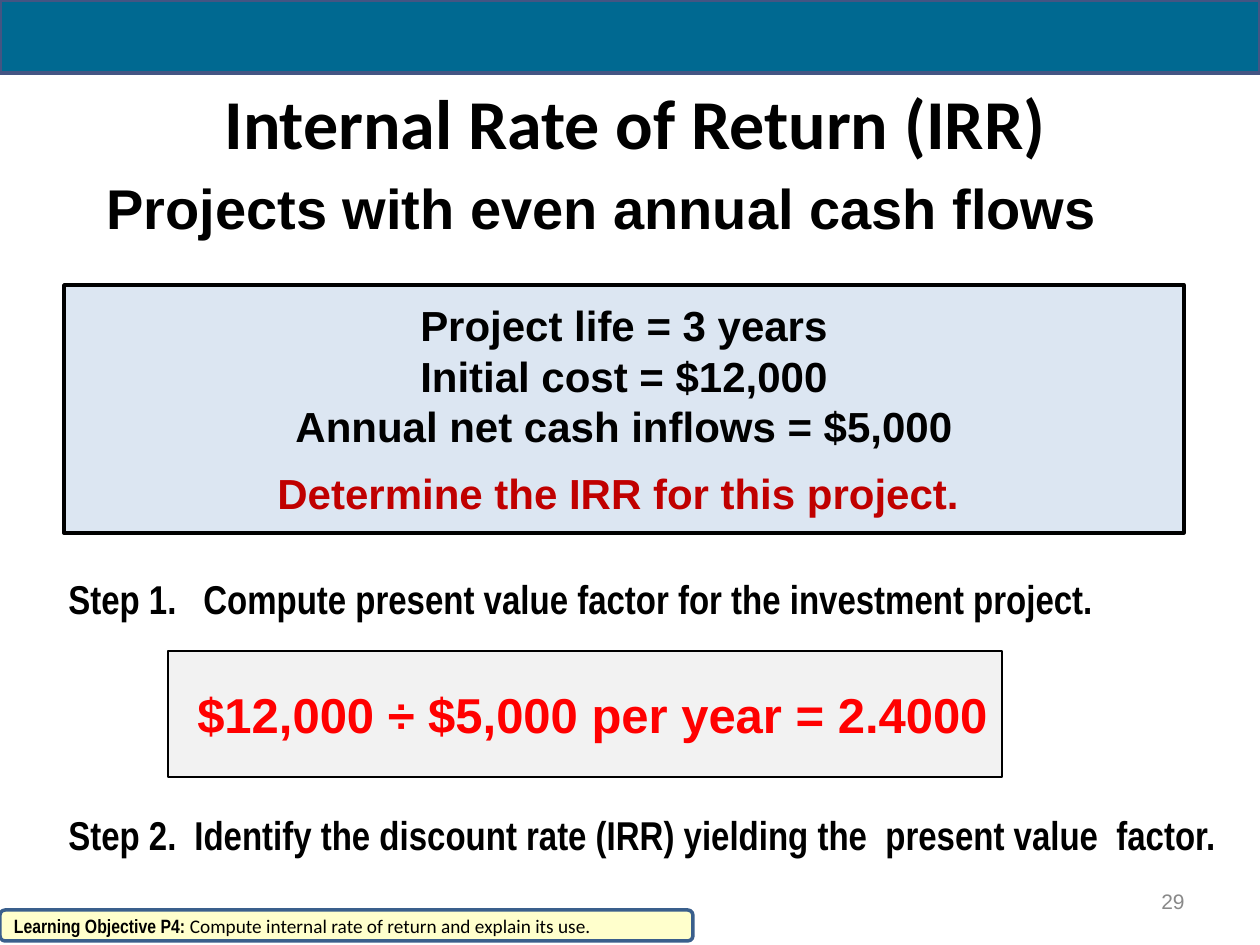
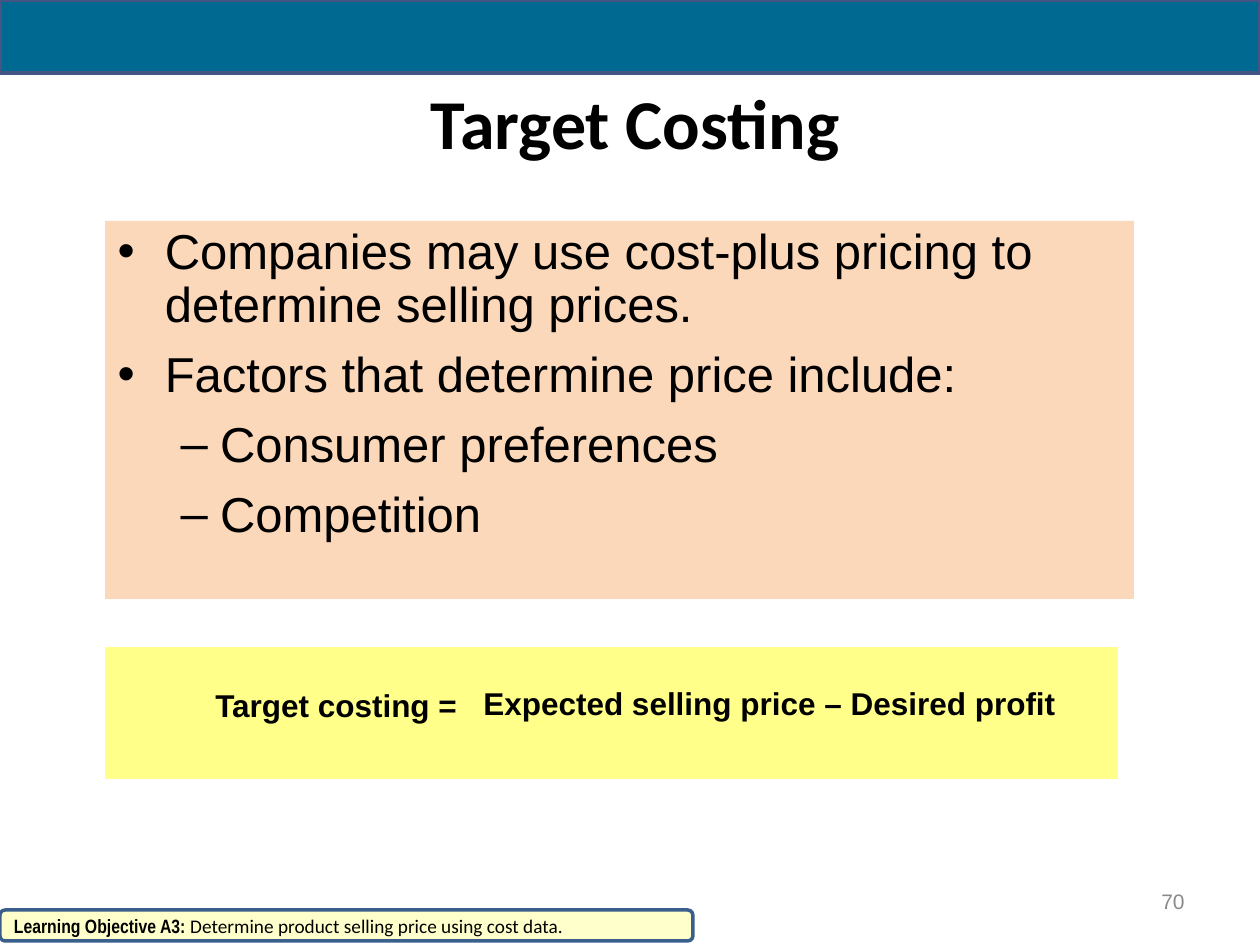
"""Build two accounting slides: internal rate of return and target costing."""
from lxml.etree import SubElement as Sub
from pptx import Presentation as Deck
from pptx.dml.color import RGBColor as RGB
from pptx.enum.shapes import MSO_SHAPE as Form
from pptx.enum.text import MSO_ANCHOR as Anchor, MSO_AUTO_SIZE as Fit, PP_ALIGN as Align
from pptx.oxml.ns import qn
from pptx.util import Pt

SCALE = 914400 / 126
BLACK = RGB(0x00, 0x00, 0x00)
TEAL = RGB(0x00, 0x69, 0x91)
PLUM = RGB(0x44, 0x55, 0x83)
ICE = RGB(0xDC, 0xE6, 0xF2)
MIST = RGB(0xF2, 0xF2, 0xF2)
CREAM = RGB(0xFF, 0xFF, 0xCC)
NAVY = RGB(0x3A, 0x5F, 0x8C)
PEACH = RGB(0xFC, 0xD5, 0xB5)
LEMON = RGB(0xFF, 0xFF, 0x89)
BRICK = RGB(0xC0, 0x00, 0x00)
RED = RGB(0xFF, 0x00, 0x00)
GREY = RGB(0x89, 0x89, 0x89)

MID = {"alignment": Align.CENTER}


def px(num):
    return round(num * SCALE)


def font(name, size, bold=True, ink=BLACK):
    return {"name": name, "size": Pt(size), "bold": bold, "ink": ink}


def style(item, vals):
    for key, val in vals.items():
        if key == "ink":
            item.color.rgb = val
        else:
            setattr(item, key, val)


class Maker:
    """Hold the shared style and the current slide."""

    head = font("Calibri", 40)
    lead = font("Arial", 32)
    step = font("Arial Narrow", 23)
    fact = font("Arial", 24)
    sum = font("Arial", 28, ink=RED)
    item = font("Arial", 28, bold=False)
    term = font("Arial", 18)
    goal = font("Arial Narrow", 11)
    note = font("Calibri", 11, bold=False)
    page = font("Arial", 12, bold=False, ink=GREY)

    def __init__(self):
        self.deck = Deck()
        self.deck.slide_width, self.deck.slide_height = px(1260), px(945)
        self.slide = None

    def start(self, title, num, code, aim):
        first = self.slide is None
        self.slide = self.deck.slides.add_slide(self.deck.slide_layouts[1])
        if first:
            band = self.rect((0, 0, 1260, 73), TEAL, PLUM, 2.25)
            self.deck.slide_master.shapes.element.insert(2, band.element)
        head = self.place(0, (68, 42, 1134, 158))
        self.line(head, [(title, self.head)], MID)
        self.text((903, 876, 294, 50), num, self.page, {"alignment": Align.RIGHT}, Anchor.MIDDLE)
        foot = self.rect((0, 910, 693, 31), CREAM, NAVY, 2, Form.ROUNDED_RECTANGLE)
        self.line(foot, [(f"Learning Objective {code}:", self.goal), (f" {aim}", self.note)],
                  {"alignment": Align.LEFT})

    def place(self, idx, box):
        hold = self.slide.placeholders[idx]
        style(hold, dict(zip(("left", "top", "width", "height"), map(px, box))))
        hold.text_frame.auto_size = Fit.NONE
        return hold

    def rect(self, box, fill, line=None, width=0, form=Form.RECTANGLE):
        shape = self.slide.shapes.add_shape(form, *map(px, box))
        shape.shadow.inherit = False
        shape.fill.solid()
        shape.fill.fore_color.rgb = fill
        if line is None:
            shape.line.fill.background()
        else:
            shape.line.color.rgb = line
            shape.line.width = Pt(width)
        shape.text_frame.vertical_anchor = Anchor.MIDDLE
        return shape

    def text(self, box, words, look, para=None, anchor=Anchor.TOP):
        area = self.slide.shapes.add_textbox(*map(px, box))
        style(area.text_frame, {"word_wrap": True, "vertical_anchor": anchor})
        return self.line(area, [(words, look)], para or {})

    def line(self, shape, runs, para, more=False):
        frame = shape.text_frame
        line = frame.add_paragraph() if more else frame.paragraphs[0]
        style(line, para)
        for words, look in runs:
            run = line.add_run()
            run.text = words
            style(run.font, look)
        return line

    def hang(self, line, size):
        props = line._p.get_or_add_pPr()
        props.set("marL", str(px(size)))
        props.set("indent", str(-px(size)))
        return props


def rate(make):
    make.start("Internal Rate of Return (IRR)", "29", "P4",
               "Compute internal rate of return and explain its use.")
    body = make.place(1, (15, 175, 1174, 76))
    line = make.line(body, [("Projects with even annual cash flows", make.lead)],
                     {**MID, "line_spacing": 0.9})
    Sub(make.hang(line, 0), qn("a:buNone"))

    facts = make.rect((64, 285, 1120, 248), ICE, BLACK, 2)
    rows = ("Project life = 3 years", "Initial cost = $12,000", "Annual net cash inflows = $5,000")
    for pos, row in enumerate(rows):
        make.line(facts, [(row, make.fact)], MID, pos > 0)
    make.line(facts, [("Determine the IRR for this project. ", {**make.fact, "ink": BRICK})],
              {**MID, "space_before": Pt(9.6)}, True)

    steps = (("Compute present value factor for the investment project.", 135),
             ("Identify the discount rate (IRR) yielding the  present value  factor.", 126))
    for pos, (words, size) in enumerate(steps):
        line = make.text((56, 568 + 236 * pos, 1195, 58), f"Step {pos + 1}.\t{words}", make.step)
        make.hang(line, size)

    ratio = make.rect((168, 651, 834, 126), MIST, BLACK, 1.5)
    ratio.text_frame.margin_left = px(27)
    make.line(ratio, [("$12,000 ÷ $5,000 per year = 2.4000", make.sum)], MID)
    for shape in (facts, ratio):
        shape.text_frame.word_wrap = False


def target(make):
    make.start("Target Costing", "70", "A3", "Determine product selling price using cost data.")
    body = make.place(1, (105, 221, 1029, 378))
    body.fill.solid()
    body.fill.fore_color.rgb = PEACH
    tint = body.element.spPr.find(qn("a:solidFill"))[0]
    Sub(tint, qn("a:alpha"), val="91000")
    points = (("Companies may use cost-plus pricing to determine selling prices.", 0),
              ("Factors that determine price include:", 0),
              ("Consumer preferences", 1), ("Competition", 1))
    for pos, (words, level) in enumerate(points):
        make.line(body, [(words, make.item)],
                  {"level": level, "line_spacing": 0.9, "space_before": Pt(9.8)}, pos > 0)

    make.rect((105, 647, 1013, 132), LEMON)
    make.text((203, 680, 325, 50), "Target costing =", make.term)
    make.text((465, 678, 609, 50), "Expected selling price – Desired profit", make.term, MID)


def main():
    make = Maker()
    rate(make)
    target(make)
    make.deck.save("out.pptx")


if __name__ == "__main__":
    main()
